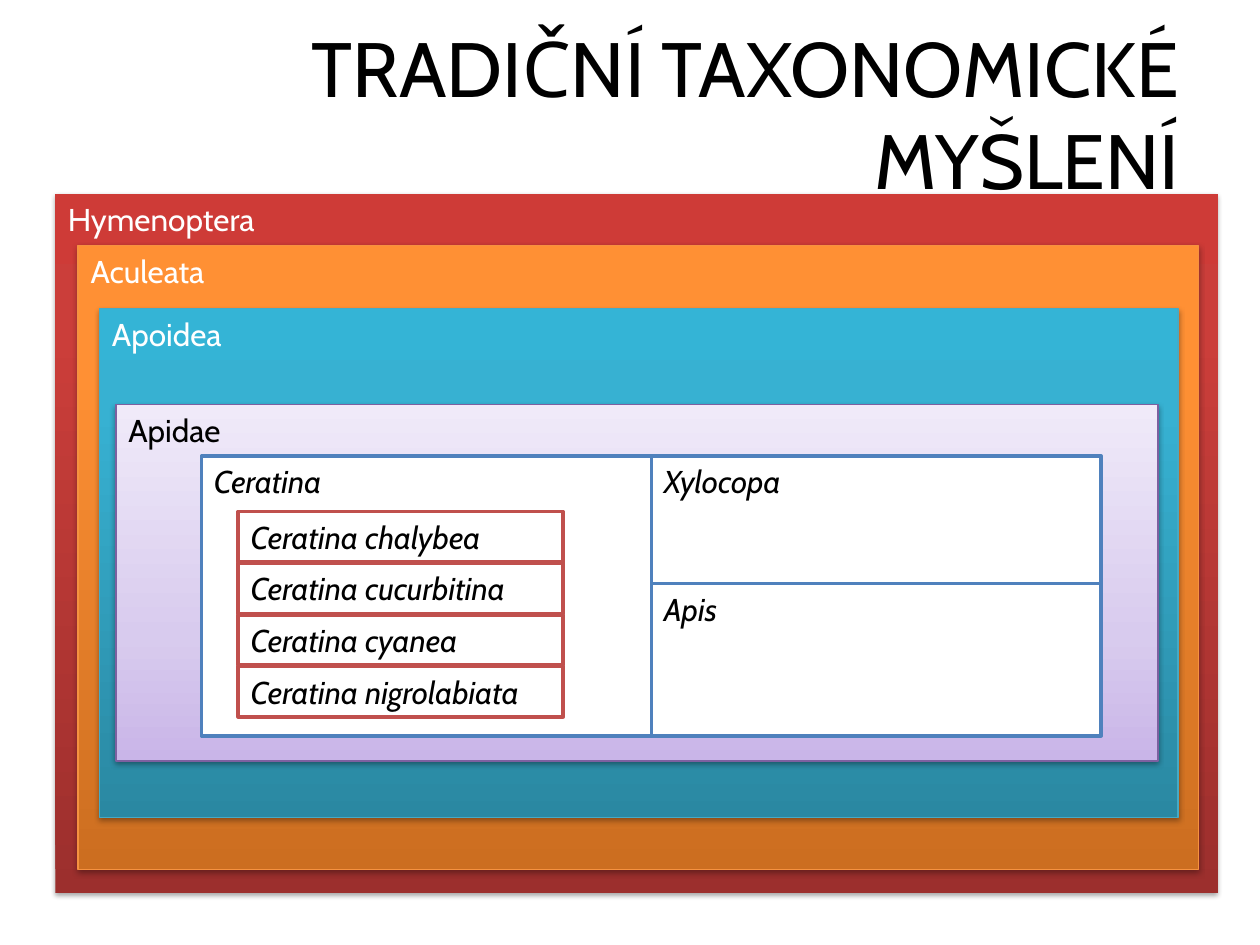
from copy import deepcopy

from lxml.etree import SubElement
from pptx import Presentation
from pptx.dml.color import RGBColor
from pptx.enum.shapes import MSO_SHAPE
from pptx.enum.text import MSO_ANCHOR, PP_ALIGN
from pptx.oxml.ns import qn
from pptx.util import Inches, Pt

FONT = "Cabin"
BLACK = RGBColor(0x00, 0x00, 0x00)
WHITE = RGBColor(0xFF, 0xFF, 0xFF)
GENUS_BLUE = RGBColor(0x4F, 0x81, 0xBD)
SPECIES_RED = RGBColor(0xC0, 0x50, 0x4D)

TITLE = "TRADIČNÍ TAXONOMICKÉ MYŠLENÍ"

# Higher taxa, outermost first:
# name, (left, top, width, height), gradient stops from the bottom up,
# outline, text colour, shadow opacity and distance
HIGHER_TAXA = [
    ("Hymenoptera", (0.44, 1.54, 9.23, 5.55),
     [(0, "9C2F2D"), (0.8, "CB3E3A"), (1, "CE3B37")], None, WHITE, 35, 1.8),
    ("Aculeata", (0.62, 1.95, 8.89, 4.95),
     [(0, "CC6E20"), (0.8, "FF9034"), (1, "FF9136")],
     RGBColor(0xF6, 0x92, 0x40), WHITE, 35, 1.8),
    ("Apoidea", (0.79, 2.45, 8.56, 4.04),
     [(0, "2A88A2"), (0.8, "37B1D2"), (1, "34B4D6")],
     RGBColor(0x46, 0xAA, 0xC5), WHITE, 35, 1.8),
    ("Apidae", (0.92, 3.21, 8.27, 2.83),
     [(0, "C9B5E8"), (0.35, "D8CBEE"), (1, "F0EAF9")],
     RGBColor(0x7D, 0x60, 0xA0), BLACK, 38, 1.6),
]

# Genera share one block: Ceratina on the left, the other two stacked on the right
GENUS_LEFT, GENUS_TOP, GENUS_W, GENUS_H = 1.6, 3.62, 3.57, 2.22
XYLOCOPA_H = 1.01
RIGHT = GENUS_LEFT + GENUS_W
GENERA = [
    ("Ceratina", (GENUS_LEFT, GENUS_TOP, GENUS_W, GENUS_H)),
    ("Xylocopa", (RIGHT, GENUS_TOP, GENUS_W, XYLOCOPA_H)),
    ("Apis", (RIGHT, GENUS_TOP + XYLOCOPA_H, GENUS_W, GENUS_H - XYLOCOPA_H)),
]

SPECIES = ["chalybea", "cucurbitina", "cyanea", "nigrolabiata"]
SPECIES_LEFT, SPECIES_TOP, SPECIES_W, SPECIES_H = 1.89, 4.06, 2.58, 0.4
SPECIES_STEP = 0.41


def write(tf, text, size, color, italic=False):
    tf.word_wrap = True
    tf.text = text
    font = tf.paragraphs[0].runs[0].font
    font.name, font.size, font.italic = FONT, Pt(size), italic
    font.color.rgb = color


def add_box(name, box, line, line_width, color, italic=False):
    s = slide.shapes.add_shape(MSO_SHAPE.RECTANGLE, *map(Inches, box))
    s.shadow.inherit = False
    s.fill.solid()
    s.fill.fore_color.rgb = WHITE
    if line is None:
        s.line.fill.background()
    else:
        s.line.color.rgb = line
        s.line.width = Pt(line_width)
    write(s.text_frame, name, 18, color, italic)
    s.text_frame.vertical_anchor = MSO_ANCHOR.TOP
    s.text_frame.paragraphs[0].alignment = PP_ALIGN.LEFT
    return s


def set_gradient(s, stops):
    s.fill.gradient()
    s.fill.gradient_angle = 90
    stop_list = s._element.spPr.find(".//" + qn("a:gsLst"))
    stop_list.append(deepcopy(stop_list[0]))
    for stop, (position, color) in zip(s.fill.gradient_stops, stops):
        stop.position = position
        stop.color.rgb = RGBColor.from_string(color)


def set_shadow(s, opacity, distance):
    effects = s._element.spPr.find(qn("a:effectLst"))
    shadow = SubElement(effects, qn("a:outerShdw"), blurRad=str(Pt(3.1)),
                        dist=str(Pt(distance)), dir="5400000", rotWithShape="0")
    color = SubElement(shadow, qn("a:srgbClr"), val="000000")
    SubElement(color, qn("a:alpha"), val=str(opacity * 1000))


prs = Presentation()
prs.slide_width, prs.slide_height = Inches(10), Inches(7.5)
slide = prs.slides.add_slide(prs.slide_layouts[6])

# Nested higher taxa
for name, box, stops, line, color, opacity, distance in HIGHER_TAXA:
    s = add_box(name, box, line, 0.75, color)
    set_gradient(s, stops)
    set_shadow(s, opacity, distance)

# Genera
for name, box in GENERA:
    add_box(name, box, GENUS_BLUE, 2, BLACK, italic=True)

# Species of Ceratina
for i, name in enumerate(SPECIES):
    box = (SPECIES_LEFT, SPECIES_TOP + i * SPECIES_STEP, SPECIES_W, SPECIES_H)
    add_box(f"Ceratina {name}", box, SPECIES_RED, 2, BLACK, italic=True)

# Title
title = slide.shapes.add_textbox(Inches(0.46), Inches(0.27), Inches(9), Inches(1.25))
write(title.text_frame, TITLE, 44, BLACK)
title.text_frame.vertical_anchor = MSO_ANCHOR.MIDDLE
title.text_frame.paragraphs[0].alignment = PP_ALIGN.RIGHT

prs.save("out.pptx")
